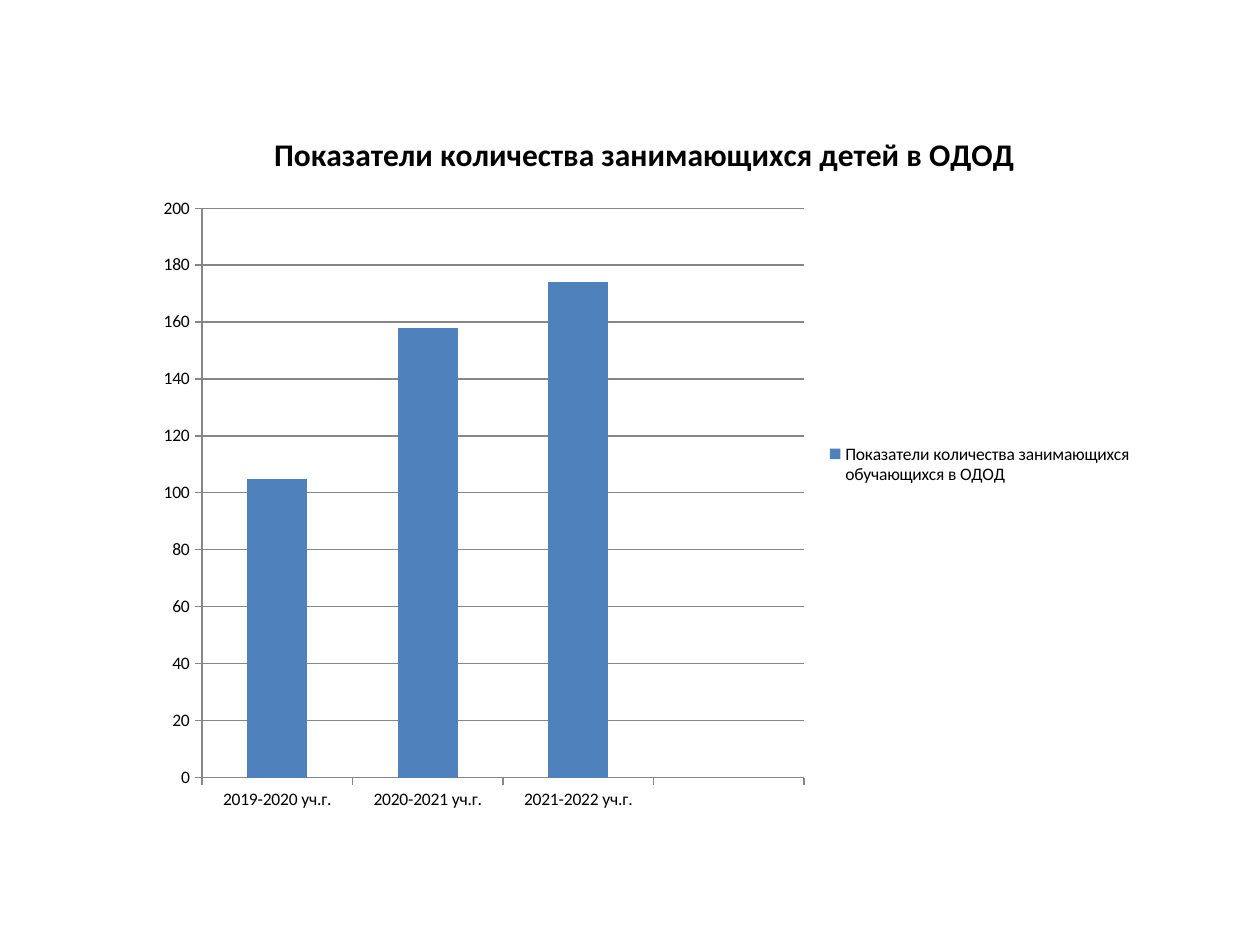
from pptx import Presentation
from pptx.chart.data import CategoryChartData
from pptx.dml.color import RGBColor
from pptx.enum.chart import XL_CHART_TYPE, XL_LEGEND_POSITION, XL_TICK_MARK
from pptx.util import Inches, Pt

COLUMN = XL_CHART_TYPE.COLUMN_CLUSTERED
RIGHT = XL_LEGEND_POSITION.RIGHT
OUT = XL_TICK_MARK.OUTSIDE
BLACK = RGBColor(0x00, 0x00, 0x00)
BLUE = RGBColor(0x4F, 0x81, 0xBD)
GRAY = RGBColor(0x86, 0x86, 0x86)
FONT = "Calibri"

TITLE = "Показатели количества занимающихся детей в ОДОД"
SERIES = "Показатели количества занимающихся обучающихся в ОДОД"
YEARS = ["2019-2020 уч.г.", "2020-2021 уч.г.", "2021-2022 уч.г.", ""]
COUNTS = [105, 158, 174, None]


def set_font(font, size, bold=False):
    font.name = FONT
    font.size = Pt(size)
    font.bold = bold
    font.color.rgb = BLACK


def set_line(line):
    line.color.rgb = GRAY
    line.width = Pt(0.75)


def add_title(chart):
    chart.has_title = True
    title = chart.chart_title
    title.include_in_layout = False
    run = title.text_frame.paragraphs[0].add_run()
    run.text = TITLE
    set_font(run.font, 18, True)


def style_axes(chart):
    for axis in (chart.category_axis, chart.value_axis):
        axis.major_tick_mark = OUT
        set_line(axis.format.line)
    scale = chart.value_axis
    scale.minimum_scale = 0
    scale.maximum_scale = 200
    scale.major_unit = 20
    scale.has_major_gridlines = True
    set_line(scale.major_gridlines.format.line)


def add_legend(chart):
    chart.has_legend = True
    chart.legend.position = RIGHT
    chart.legend.include_in_layout = False


def add_counts(slide, left, top, width, height):
    data = CategoryChartData()
    data.categories = YEARS
    data.add_series(SERIES, COUNTS)
    chart = slide.shapes.add_chart(COLUMN, left, top, width, height, data).chart
    set_font(chart.font, 10)
    add_title(chart)
    style_axes(chart)
    add_legend(chart)
    plot = chart.plots[0]
    plot.gap_width = 150
    plot.vary_by_categories = False
    fill = plot.series[0].format.fill
    fill.solid()
    fill.fore_color.rgb = BLUE


def main():
    deck = Presentation()
    deck.slide_width = Inches(10)
    deck.slide_height = Inches(7.5)
    slide = deck.slides.add_slide(deck.slide_layouts[6])
    add_counts(slide, Inches(1.14), Inches(0.84), Inches(7.95), Inches(5.7))
    deck.save("out.pptx")


if __name__ == "__main__":
    main()
